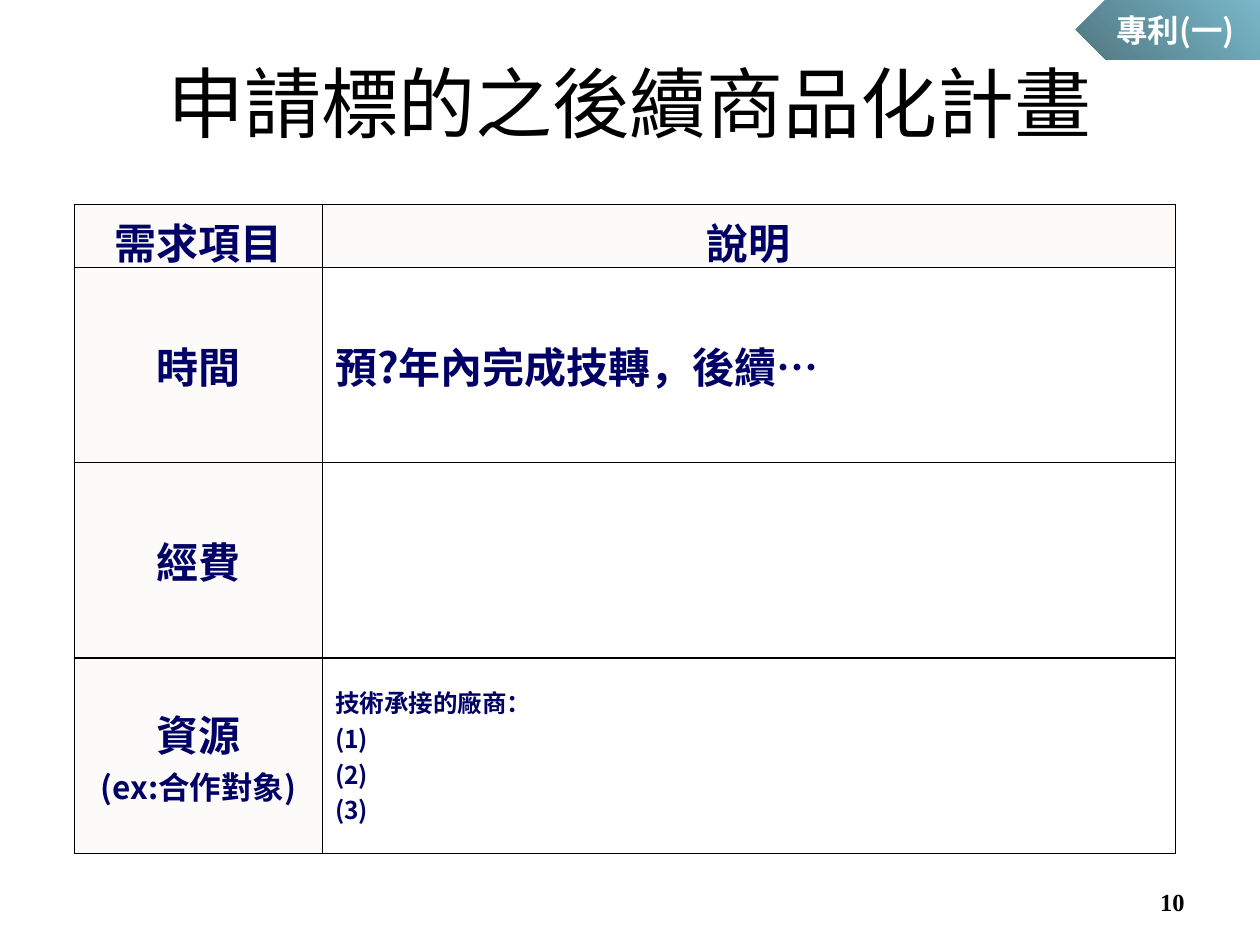
from lxml import etree
from pptx import Presentation
from pptx.dml.color import RGBColor
from pptx.enum.shapes import MSO_SHAPE
from pptx.enum.text import MSO_ANCHOR, PP_ALIGN
from pptx.oxml.ns import qn
from pptx.util import Pt

PENTAGON = MSO_SHAPE.PENTAGON
MIDDLE = MSO_ANCHOR.MIDDLE
LEFT, CENTER, RIGHT = PP_ALIGN.LEFT, PP_ALIGN.CENTER, PP_ALIGN.RIGHT

SANS = "Noto Sans CJK SC"
SERIF = "Times New Roman"
BLACK, WHITE, NAVY, CREAM = "000000", "FFFFFF", "000066", "FCFBF9"
BORDER_SIDES = ("a:lnL", "a:lnR", "a:lnT", "a:lnB")

COLUMN_WIDTHS = (141.8, 487.4)
ROW_HEIGHTS = (36, 111.6, 111.6, 111.6)
# Each cell is a list of (text, size) paragraphs.
PLAN_ROWS = (
    ([("需求項目", 24)], [("說明", 24)]),
    ([("時間", 24)], [("預?年內完成技轉，後續…", 24)]),
    ([("經費", 24)], []),
    ([("資源", 24), ("(ex:合作對象)", 18)],
     [("技術承接的廠商：", 14), ("(1)", 14), ("(2)", 14), ("(3)", 14)]),
)


def color(hex_string):
    return RGBColor.from_string(hex_string)


def write(para, text, size=24, font=SANS, fill=BLACK, bold=False, align=LEFT):
    para.alignment = align
    span = para.add_run()
    span.text = text
    span.font.size = Pt(size)
    span.font.name = font
    span.font.bold = bold
    span.font.color.rgb = color(fill)
    # East Asian characters take their typeface from a separate element.
    etree.SubElement(span.font._element, qn("a:ea"), typeface=font)


def add_text_box(page, left, top, width, height, text, **text_format):
    box = page.shapes.add_textbox(Pt(left), Pt(top), Pt(width), Pt(height))
    frame = box.text_frame
    frame.word_wrap = True
    frame.vertical_anchor = MIDDLE
    write(frame.paragraphs[0], text, **text_format)


def add_borders(cell, line_color, width):
    properties = cell._tc.get_or_add_tcPr()
    for side in BORDER_SIDES:
        line = etree.SubElement(properties, qn(side), w=str(Pt(width)))
        solid = etree.SubElement(line, qn("a:solidFill"))
        etree.SubElement(solid, qn("a:srgbClr"), val=line_color)


def fill_cell(cell, lines, is_heading):
    cell.vertical_anchor = MIDDLE
    add_borders(cell, BLACK, 1)
    if is_heading:
        cell.fill.solid()
        cell.fill.fore_color.rgb = color(CREAM)
    else:
        cell.fill.background()
    frame = cell.text_frame
    for index, (text, size) in enumerate(lines):
        para = frame.add_paragraph() if index else frame.paragraphs[0]
        write(para, text, size=size, fill=NAVY, bold=True,
              align=CENTER if is_heading else LEFT)


def add_plan_table(page, left, top):
    frame = page.shapes.add_table(
        len(ROW_HEIGHTS), len(COLUMN_WIDTHS), Pt(left), Pt(top),
        Pt(sum(COLUMN_WIDTHS)), Pt(sum(ROW_HEIGHTS)))
    table = frame.table
    table.first_row = table.horz_banding = False
    for column, width in zip(table.columns, COLUMN_WIDTHS):
        column.width = Pt(width)
    for row, height in zip(table.rows, ROW_HEIGHTS):
        row.height = Pt(height)
    for row_index, row in enumerate(PLAN_ROWS):
        for column_index, lines in enumerate(row):
            fill_cell(table.cell(row_index, column_index), lines,
                      is_heading=row_index == 0 or column_index == 0)


def add_tag(page, left, top, width, height, text):
    """Add a left-pointing label with a translucent gradient."""
    tag = page.shapes.add_shape(
        PENTAGON, Pt(left), Pt(top), Pt(width), Pt(height))
    tag.shadow.inherit = False
    tag.line.fill.background()
    tag._element.spPr.find(qn("a:xfrm")).set("flipH", "1")
    tag.fill.gradient()
    tag.fill.gradient_angle = 315
    for stop, stop_color in zip(tag.fill.gradient_stops, ("57A7BD", "275663")):
        stop.color.rgb = color(stop_color)
    for value in tag._element.spPr.iter(qn("a:srgbClr")):
        etree.SubElement(value, qn("a:alpha"), val="80000")
    frame = tag.text_frame
    frame.word_wrap = False
    frame.vertical_anchor = MIDDLE
    write(frame.paragraphs[0], text, size=18, fill=WHITE, bold=True,
          align=CENTER)


def main():
    deck = Presentation()
    deck.slide_width, deck.slide_height = Pt(720), Pt(540)
    page = deck.slides.add_slide(deck.slide_layouts[6])
    add_text_box(page, 516, 500.5, 168, 29, "10", size=14, font=SERIF,
                 bold=True, align=RIGHT)
    add_text_box(page, 36, 21.6, 648, 72.7, "申請標的之後續商品化計畫",
                 size=44, align=CENTER)
    add_plan_table(page, 42.5, 116.8)
    add_tag(page, 614.9, 0, 105.1, 34, "專利(一)")
    deck.save("out.pptx")


if __name__ == "__main__":
    main()
